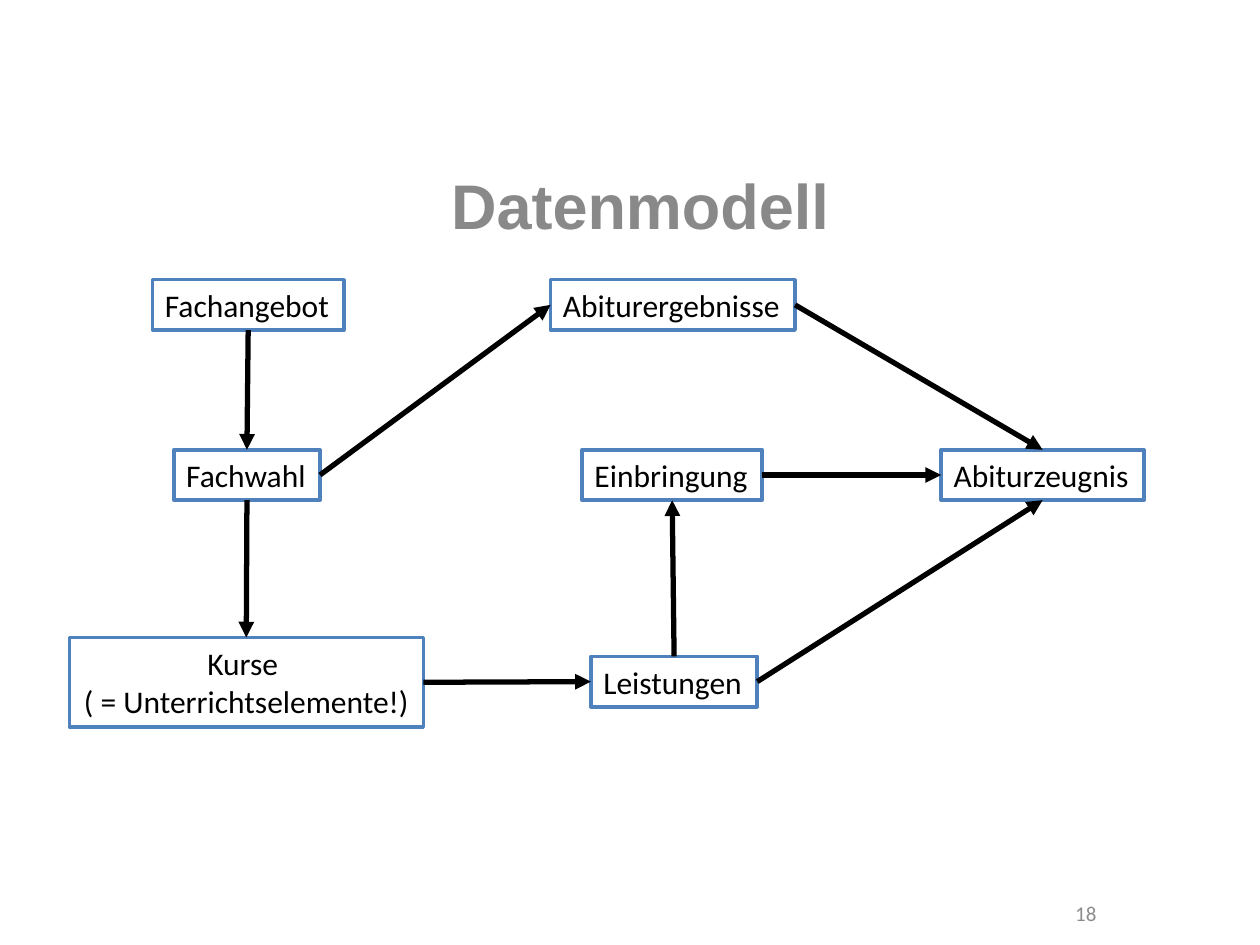
"""Build the "Datenmodell" slide: entity boxes joined by arrows."""
from lxml import etree
from pptx import Presentation
from pptx.dml.color import RGBColor
from pptx.enum.shapes import MSO_CONNECTOR, MSO_SHAPE
from pptx.enum.text import MSO_ANCHOR, MSO_AUTO_SIZE, PP_ALIGN
from pptx.oxml.ns import qn
from pptx.util import Inches, Pt

RECT, STRAIGHT = MSO_SHAPE.RECTANGLE, MSO_CONNECTOR.STRAIGHT
TOP, MIDDLE = MSO_ANCHOR.TOP, MSO_ANCHOR.MIDDLE
GROW = MSO_AUTO_SIZE.SHAPE_TO_FIT_TEXT
LEFT, CENTER, RIGHT = PP_ALIGN.LEFT, PP_ALIGN.CENTER, PP_ALIGN.RIGHT
SITE_TOP, SITE_LEFT, SITE_BOTTOM, SITE_RIGHT = range(4)


def rgb(value):
    return RGBColor.from_string(value)


def write(tf, lines, align, color, font):
    for i, line in enumerate(lines):
        p = tf.paragraphs[0] if i == 0 else tf.add_paragraph()
        p.alignment = align
        r = p.add_run()
        r.text = line
        r.font.color.rgb = rgb(color)
        for name, value in font.items():
            setattr(r.font, name, value)


prs = Presentation()
prs.slide_width, prs.slide_height = Inches(10), Inches(7.5)
s = prs.slides.add_slide(prs.slide_layouts[6])

title_font = {"name": "Arial", "size": Pt(36), "bold": True}
number_font = {"name": "Calibri", "size": Pt(12)}
box_font = {"name": "Calibri", "size": Pt(18)}

labels = [
    ("18", (7.71, 7.14, 1.09, 0.22), RIGHT, "8C8C8C", number_font),
    ("Datenmodell", (0.16, 1.23, 9.84, 0.79), CENTER, "898989", title_font),
]
for text, area, align, color, font in labels:
    tf = s.shapes.add_textbox(*map(Inches, area)).text_frame
    tf.word_wrap = True
    tf.vertical_anchor = MIDDLE
    write(tf, [text], align, color, font)

entities = {
    "Fachangebot": (1.21, 2.22, 1.52, 0.4, LEFT, ["Fachangebot"]),
    "Kurse": (0.55, 5.06, 2.81, 0.71, CENTER, ["Kurse ", "( = Unterrichtselemente!)"]),
    "Fachwahl": (1.38, 3.57, 1.16, 0.4, LEFT, ["Fachwahl"]),
    "Leistungen": (4.69, 5.21, 1.32, 0.4, LEFT, ["Leistungen"]),
    "Einbringung": (4.62, 3.57, 1.43, 0.4, LEFT, ["Einbringung"]),
    "Abiturergebnisse": (4.37, 2.22, 1.94, 0.4, LEFT, ["Abiturergebnisse"]),
    "Abiturzeugnis": (7.47, 3.57, 1.61, 0.4, LEFT, ["Abiturzeugnis"]),
}
boxes = {}
for name, (*area, align, lines) in entities.items():
    sp = s.shapes.add_shape(RECT, *map(Inches, area))
    sp.shadow.inherit = False
    sp.fill.solid()
    sp.fill.fore_color.rgb = rgb("FFFFFF")
    sp.line.color.rgb = rgb("4F81BD")
    sp.line.width = Pt(2)
    tf = sp.text_frame
    for key, value in {"word_wrap": False, "auto_size": GROW, "vertical_anchor": TOP}.items():
        setattr(tf, key, value)
    write(tf, lines, align, "000000", box_font)
    boxes[name] = sp

arrows = [
    ("Fachangebot", SITE_BOTTOM, "Fachwahl", SITE_TOP),
    ("Fachwahl", SITE_BOTTOM, "Kurse", SITE_TOP),
    ("Kurse", SITE_RIGHT, "Leistungen", SITE_LEFT),
    ("Leistungen", SITE_TOP, "Einbringung", SITE_BOTTOM),
    ("Fachwahl", SITE_RIGHT, "Abiturergebnisse", SITE_LEFT),
    ("Abiturergebnisse", SITE_RIGHT, "Abiturzeugnis", SITE_TOP),
    ("Einbringung", SITE_RIGHT, "Abiturzeugnis", SITE_LEFT),
    ("Leistungen", SITE_RIGHT, "Abiturzeugnis", SITE_BOTTOM),
]
for source, source_site, target, target_site in arrows:
    cn = s.shapes.add_connector(STRAIGHT, 0, 0, 0, 0)
    cn.begin_connect(boxes[source], source_site)
    cn.end_connect(boxes[target], target_site)
    cn.line.color.rgb = rgb("000000")
    cn.line.width = Pt(3)
    etree.SubElement(cn.line._get_or_add_ln(), qn("a:tailEnd"), type="triangle")
    etree.SubElement(cn._element.spPr, qn("a:effectLst"))

prs.save("out.pptx")
